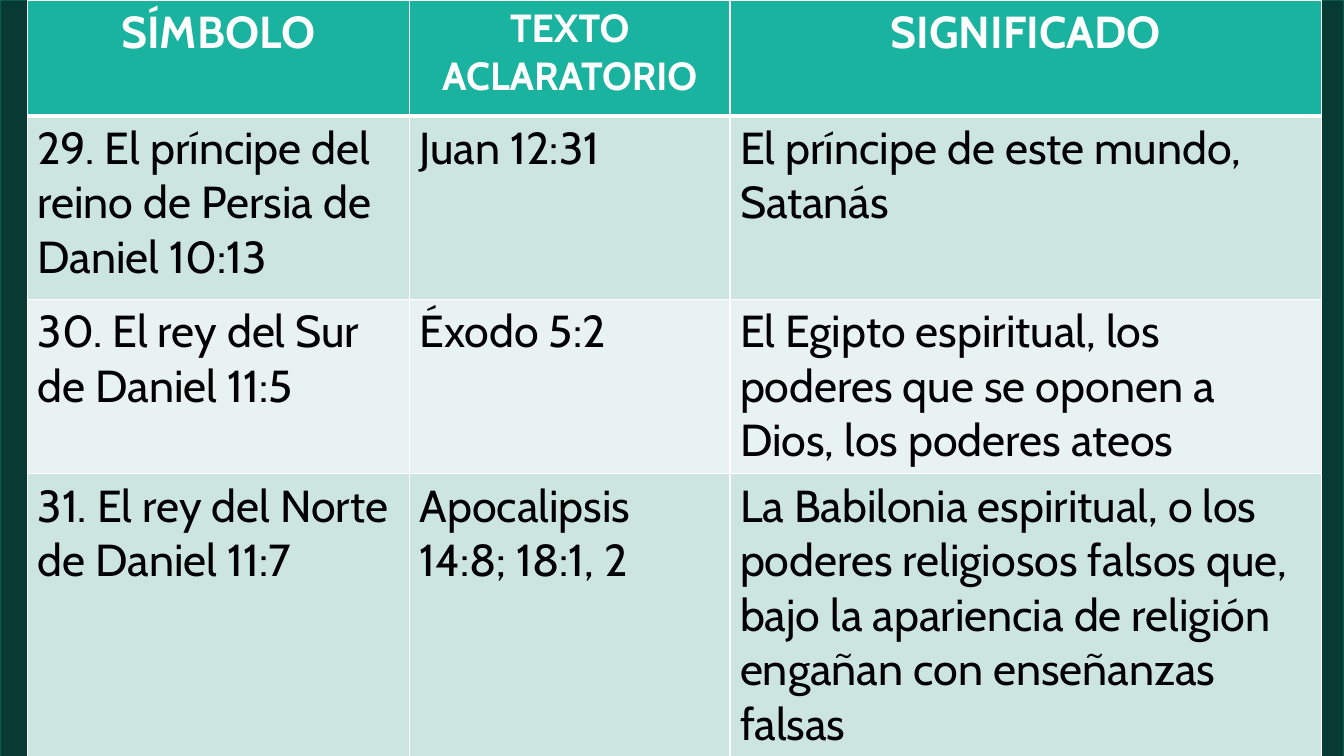
import pptx
import pptx.dml.color
import pptx.enum.shapes
import pptx.enum.text
import pptx.oxml
import pptx.oxml.ns
import pptx.util

Pt = pptx.util.Pt
ALIGN = pptx.enum.text.PP_ALIGN
COLORS = {
    "background": "002060",
    "backdrop": "083A34",
    "backdrop_line": "0D5A4F",
    "header": "1AB39F",
    "odd_row": "CDE5DF",
    "even_row": "E8F2F0",
    "light": "FFFFFF",
    "dark": "000000",
}
FONT = "Cabin"
SLIDE_WIDTH, SLIDE_HEIGHT = 960, 540
COLUMN_WIDTHS = [272.88, 228.96, 422.64]
ROW_HEIGHTS = [82.8, 131.04, 124.56, 203.04]
HEADINGS = [("SÍMBOLO", 32), ("TEXTO ACLARATORIO", 28), ("SIGNIFICADO", 32)]
SYMBOLS = [
    ("29. El príncipe del reino de Persia de Daniel 10:13", "Juan 12:31",
     "El príncipe de este mundo, Satanás"),
    ("30. El rey del Sur de Daniel 11:5", "Éxodo 5:2",
     "El Egipto espiritual, los poderes que se oponen a Dios, los poderes ateos"),
    ("31. El rey del Norte de Daniel 11:7", "Apocalipsis 14:8; 18:1, 2",
     "La Babilonia espiritual, o los poderes religiosos falsos que, bajo la "
     "apariencia de religión engañan con enseñanzas\nfalsas"),
]


def rgb(name):
    return pptx.dml.color.RGBColor.from_string(COLORS[name])


def paint(fill, color):
    fill.solid()
    fill.fore_color.rgb = rgb(color)


def write(frame, text, size=32, color="dark", bold=False, align=ALIGN.LEFT):
    """Fill a text frame, one paragraph for each line of text."""
    frame.text = text
    for paragraph in frame.paragraphs:
        paragraph.alignment = align
        for run in paragraph.runs:
            run.font.name = FONT
            run.font.size = Pt(size)
            run.font.bold = bold
            run.font.color.rgb = rgb(color)


def add_borders(cell, top=1, bottom=1):
    """Put white borders ahead of the cell's fill, in schema order."""
    properties = cell._tc.get_or_add_tcPr()
    widths = {"lnL": 1, "lnR": 1, "lnT": top, "lnB": bottom}
    for position, (side, width) in enumerate(widths.items()):
        border = pptx.oxml.parse_xml(
            f'<a:{side} {pptx.oxml.ns.nsdecls("a")} w="{Pt(width)}"><a:solidFill>'
            f'<a:srgbClr val="{COLORS["light"]}"/></a:solidFill></a:{side}>')
        properties.insert(position, border)


def add_backdrop(slide, left, top, width, height):
    backdrop = slide.shapes.add_shape(
        pptx.enum.shapes.MSO_SHAPE.RECTANGLE, Pt(left), Pt(top), Pt(width), Pt(height))
    backdrop.shadow.inherit = False
    paint(backdrop.fill, "backdrop")
    backdrop.line.color.rgb = rgb("backdrop_line")
    backdrop.line.width = Pt(0.85)


def add_symbol_table(slide, left, top, width, height):
    table = slide.shapes.add_table(
        len(ROW_HEIGHTS), len(COLUMN_WIDTHS),
        Pt(left), Pt(top), Pt(width), Pt(height)).table
    for column, share in zip(table.columns, COLUMN_WIDTHS):
        column.width = Pt(width * share / sum(COLUMN_WIDTHS))
    for row, share in zip(table.rows, ROW_HEIGHTS):
        row.height = Pt(height * share / sum(ROW_HEIGHTS))

    for column, (heading, size) in enumerate(HEADINGS):
        cell = table.cell(0, column)
        write(cell.text_frame, heading, size=size, color="light", bold=True,
              align=ALIGN.CENTER)
        paint(cell.fill, "header")
        add_borders(cell, bottom=3)

    for row, symbol in enumerate(SYMBOLS, start=1):
        for column, text in enumerate(symbol):
            cell = table.cell(row, column)
            write(cell.text_frame, text)
            paint(cell.fill, "odd_row" if row % 2 else "even_row")
            add_borders(cell, top=3 if row == 1 else 1)


def main():
    presentation = pptx.Presentation()
    presentation.slide_width = Pt(SLIDE_WIDTH)
    presentation.slide_height = Pt(SLIDE_HEIGHT)
    slide = presentation.slides.add_slide(presentation.slide_layouts[6])
    paint(slide.background.fill, "background")
    add_backdrop(slide, 0, 0, SLIDE_WIDTH, 540.5)
    add_symbol_table(slide, 19.6, 0, sum(COLUMN_WIDTHS), sum(ROW_HEIGHTS))
    presentation.save("out.pptx")


if __name__ == "__main__":
    main()
